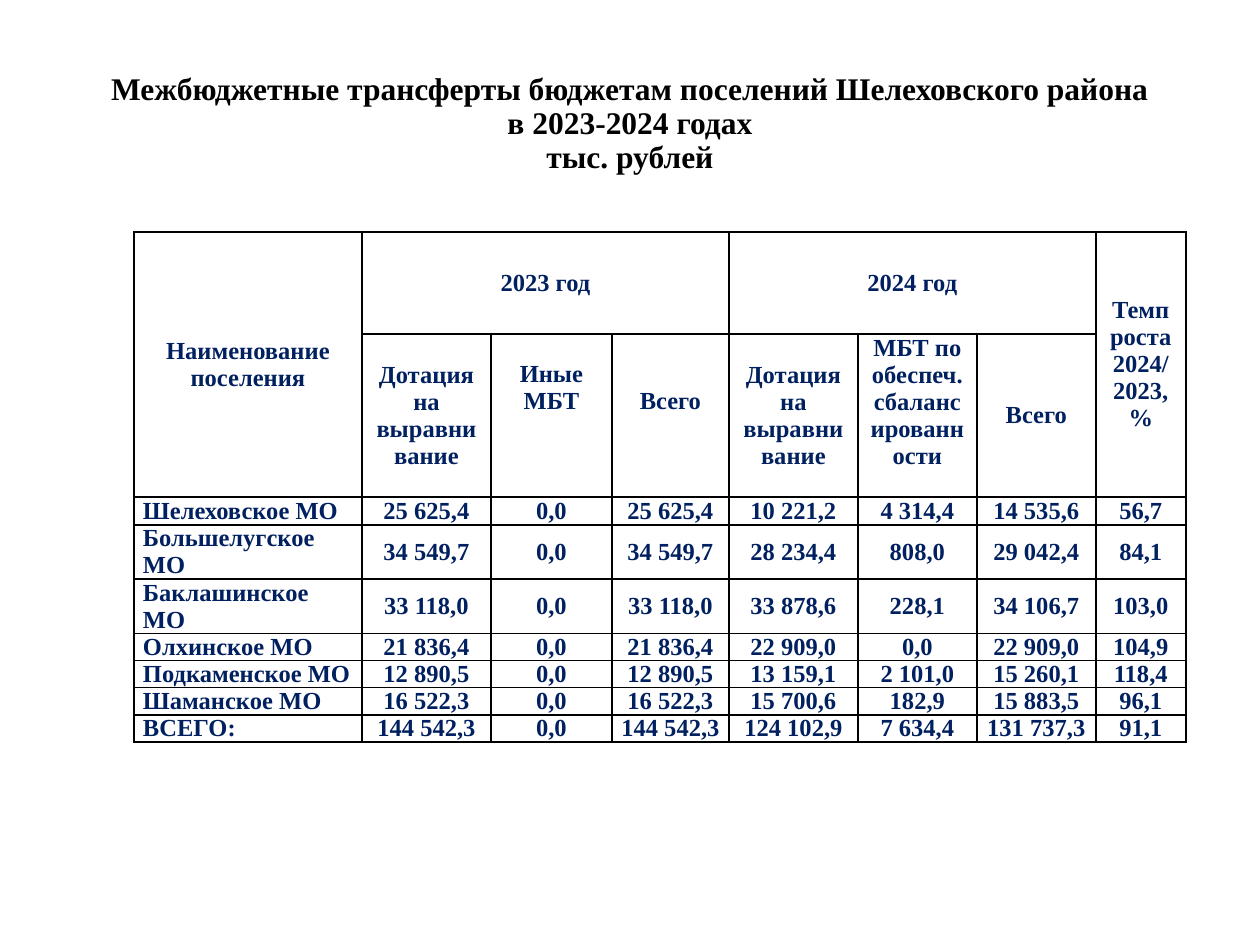
from lxml.etree import SubElement
from pptx import Presentation
from pptx.dml.color import RGBColor
from pptx.enum.text import MSO_ANCHOR, PP_ALIGN
from pptx.oxml.ns import qn
from pptx.util import Emu, Pt

TITLE = ("Межбюджетные трансферты бюджетам поселений Шелеховского района "
         "в 2023-2024 годах\vтыс. рублей")
HEADER = [
    ["Наименование\nпоселения", "2023 год", "", "", "2024 год", "", "",
     "Темп роста 2024/ 2023, %"],
    ["", "Дотация на выравнивание", "Иные МБТ", "Всего",
     "Дотация на выравнивание", "МБТ по обеспеч. сбалансированности", "Всего", ""],
]
SETTLEMENTS = [
    ["Шелеховское МО", "25 625,4", "0,0", "25 625,4", "10 221,2", "4 314,4", "14 535,6", "56,7"],
    ["Большелугское МО", "34 549,7", "0,0", "34 549,7", "28 234,4", "808,0", "29 042,4", "84,1"],
    ["Баклашинское МО", "33 118,0", "0,0", "33 118,0", "33 878,6", "228,1", "34 106,7", "103,0"],
    ["Олхинское МО", "21 836,4", "0,0", "21 836,4", "22 909,0", "0,0", "22 909,0", "104,9"],
    ["Подкаменское МО", "12 890,5", "0,0", "12 890,5", "13 159,1", "2 101,0", "15 260,1", "118,4"],
    ["Шаманское МО", "16 522,3", "0,0", "16 522,3", "15 700,6", "182,9", "15 883,5", "96,1"],
    ["ВСЕГО:", "144 542,3", "0,0", "144 542,3", "124 102,9", "7 634,4", "131 737,3", "91,1"],
]
MERGES = [((0, 0), (1, 0)), ((0, 1), (0, 3)), ((0, 4), (0, 6)), ((0, 7), (1, 7))]
COLUMNS = [228, 129, 121, 117, 129, 119, 119, 90]
ROWS = [102, 163, 28, 54, 54, 27, 27, 27, 27]
LINE = 27
# Subheadings set apart from the usual middle position
CELL_FORMATS = {
    (1, 2): {"vertical_anchor": MSO_ANCHOR.TOP, "margin_top": LINE},
    (1, 3): {"vertical_anchor": MSO_ANCHOR.TOP, "margin_top": 2 * LINE},
    (1, 5): {"margin_bottom": LINE},
}
FONT = "Times New Roman"


def px(length):
    return Emu(round(length * 914400 / 126))


def color(value):
    return RGBColor.from_string(value)


def set_attributes(target, values):
    for name, value in values.items():
        setattr(target, name, px(value) if name.startswith("margin") else value)


def format_text(text_frame, size, font_color, alignment, **paragraph_values):
    for paragraph in text_frame.paragraphs:
        set_attributes(paragraph, {"alignment": alignment, **paragraph_values})
        for run in paragraph.runs:
            set_attributes(run.font, {"name": FONT, "size": Pt(size), "bold": True})
            run.font.color.rgb = color(font_color)


def add_borders(cell):
    properties = cell._tc.get_or_add_tcPr()
    for index, side in enumerate(("lnL", "lnR", "lnT", "lnB")):
        line = SubElement(properties, qn("a:" + side), w=str(Pt(1)))
        SubElement(SubElement(line, qn("a:solidFill")), qn("a:srgbClr"), val="000000")
        properties.insert(index, line)


presentation = Presentation()
presentation.slide_width, presentation.slide_height = px(1260), px(945)
slide = presentation.slides.add_slide(presentation.slide_layouts[5])

# Title
title = slide.shapes.title
set_attributes(title, {"left": px(87), "top": px(50), "width": px(1086), "height": px(183)})
title.text_frame.text = TITLE
set_attributes(title.text_frame, {"vertical_anchor": MSO_ANCHOR.MIDDLE, "margin_bottom": 40})
format_text(title.text_frame, 18, "000000", PP_ALIGN.CENTER, line_spacing=0.9)

# Table grid
content = HEADER + SETTLEMENTS
table = slide.shapes.add_table(len(ROWS), len(COLUMNS), px(134), px(232),
                               px(sum(COLUMNS)), px(sum(ROWS))).table
set_attributes(table, {"first_row": False, "horz_banding": False})
for column, width in zip(table.columns, COLUMNS):
    column.width = px(width)
for row, height in zip(table.rows, ROWS):
    row.height = px(height)
for first, last in MERGES:
    table.cell(*first).merge(table.cell(*last))

# Table cells
for row_index, texts in enumerate(content):
    for column_index, text in enumerate(texts):
        cell = table.cell(row_index, column_index)
        if text:
            cell.text = text
        set_attributes(cell, {"vertical_anchor": MSO_ANCHOR.MIDDLE, "margin_left": 9,
                              "margin_right": 9, "margin_top": 0, "margin_bottom": 0,
                              **CELL_FORMATS.get((row_index, column_index), {})})
        is_name = column_index == 0 and row_index >= len(HEADER)
        format_text(cell.text_frame, 14, "002060",
                    PP_ALIGN.JUSTIFY if is_name else PP_ALIGN.CENTER)
        cell.fill.background()
        add_borders(cell)

presentation.save("out.pptx")
